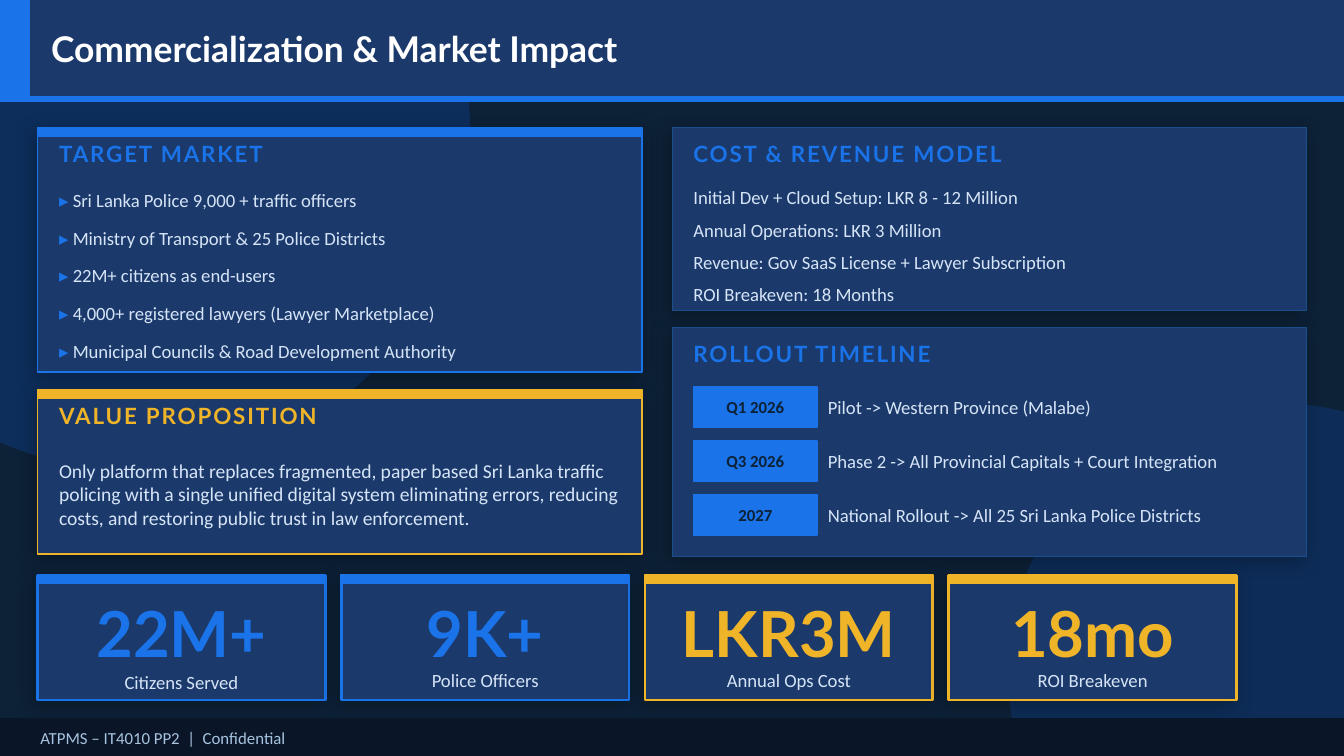
from dataclasses import dataclass

from lxml.etree import SubElement
from pptx import Presentation
from pptx.dml.color import RGBColor
from pptx.enum.shapes import MSO_SHAPE
from pptx.enum.text import MSO_ANCHOR, PP_ALIGN
from pptx.oxml.ns import qn
from pptx.util import Inches, Pt


@dataclass(frozen=True)
class Theme:
    background: str = "0D2137"
    glow: str = "0D47A1"
    panel: str = "1B3A6B"
    panel_edge: str = "1B4F8A"
    blue: str = "1A73E8"
    gold: str = "F0B429"
    white: str = "FFFFFF"
    text: str = "D6E4F7"
    footer: str = "0A1628"
    footer_text: str = "A8C4E0"
    shadow: str = "000000"
    heading_font: str = "Lato"
    body_font: str = "Calibri"
    title_size: float = 19
    heading_size: float = 12
    body_size: float = 10
    quote_size: float = 10.5
    small_size: float = 9
    stat_size: float = 34


@dataclass(frozen=True)
class Box:
    x: float
    y: float
    w: float
    h: float

    def lengths(self):
        return [Inches(v) for v in (self.x, self.y, self.w, self.h)]


@dataclass(frozen=True)
class Panel:
    box: Box
    heading: str
    color: str
    edge: str
    line_width: float
    has_bar: bool


@dataclass(frozen=True)
class Milestone:
    date: str
    text: str


@dataclass(frozen=True)
class Stat:
    value: str
    label: str
    color: str
    label_y: float = 4.98


T = Theme()
PAD = 0.16
BAR_H = 0.06


def add_shadow(sp) -> None:
    effects = sp._element.spPr.find(qn("a:effectLst"))
    shadow = SubElement(effects, qn("a:outerShdw"), blurRad=str(Pt(10)), dist=str(Pt(3)),
                        dir=str(135 * 60000), algn="bl", rotWithShape="0")
    clr = SubElement(shadow, qn("a:srgbClr"), val=T.shadow)
    SubElement(clr, qn("a:alpha"), val="25000")


def add_filled(s, kind, box: Box, fill: str):
    sp = s.shapes.add_shape(kind, *box.lengths())
    sp.shadow.inherit = False
    sp.fill.solid()
    sp.fill.fore_color.rgb = RGBColor.from_string(fill)
    return sp


def add_rect(s, box: Box, fill: str, edge: str, width: float = 1, shadow: bool = False) -> None:
    sp = add_filled(s, MSO_SHAPE.RECTANGLE, box, fill)
    sp.line.color.rgb = RGBColor.from_string(edge)
    sp.line.width = Pt(width)
    if shadow:
        add_shadow(sp)


def add_glow(s, box: Box, opacity: int) -> None:
    sp = add_filled(s, MSO_SHAPE.OVAL, box, T.glow)
    clr = sp._element.spPr.find(".//" + qn("a:srgbClr"))
    SubElement(clr, qn("a:alpha"), val=str(opacity * 1000))
    sp.line.fill.background()


def add_text(s, box: Box, text: str, size: float, color: str, font: str = T.body_font,
             bold: bool = False, align=PP_ALIGN.LEFT, anchor=MSO_ANCHOR.MIDDLE,
             spacing: float = 0, marker: str = "") -> None:
    tf = s.shapes.add_textbox(*box.lengths()).text_frame
    tf.word_wrap = True
    tf.margin_left = tf.margin_top = tf.margin_right = tf.margin_bottom = 0
    tf.vertical_anchor = anchor
    p = tf.paragraphs[0]
    p.alignment = align
    parts = [(marker, T.blue), (text, color)] if marker else [(text, color)]
    for words, shade in parts:
        r = p.add_run()
        r.text = words
        r.font.size = Pt(size)
        r.font.name = font
        r.font.bold = bold
        r.font.color.rgb = RGBColor.from_string(shade)
        if spacing:
            r.font._element.set("spc", str(int(spacing * 100)))


def add_panel(s, panel: Panel) -> None:
    b = panel.box
    add_rect(s, b, T.panel, panel.edge, panel.line_width, shadow=True)
    if panel.has_bar:
        add_rect(s, Box(b.x, b.y, b.w, BAR_H), panel.color, panel.color)
    add_text(s, Box(b.x + PAD, b.y + 0.02, b.w - 2 * PAD, 0.34), panel.heading,
             T.heading_size, panel.color, T.heading_font, bold=True, spacing=1)


def add_lines(s, panel: Panel, lines: list[str], step: float, marker: str = "") -> None:
    b = panel.box
    for i, line in enumerate(lines):
        add_text(s, Box(b.x + PAD, b.y + 0.4 + i * step, b.w - 2 * PAD, step), line,
                 T.body_size, T.text, marker=marker)


def add_milestone(s, x: float, y: float, item: Milestone) -> None:
    badge = Box(x, y, 0.92, 0.3)
    add_rect(s, badge, T.blue, T.blue)
    add_text(s, badge, item.date, T.small_size, T.background, bold=True, align=PP_ALIGN.CENTER)
    add_text(s, Box(x + 1, y, 3.44, 0.3), item.text, T.body_size, T.text)


def add_stat(s, x: float, stat: Stat) -> None:
    y, w = 4.28, 2.14
    add_rect(s, Box(x, y, w, 0.93), T.panel, stat.color, 1.5, shadow=True)
    add_rect(s, Box(x, y, w, BAR_H), stat.color, stat.color)
    add_text(s, Box(x, y + BAR_H, w, 0.72), stat.value, T.stat_size, stat.color,
             T.heading_font, bold=True, align=PP_ALIGN.CENTER)
    add_text(s, Box(x, stat.label_y, w, 0.46), stat.label, T.body_size, T.text,
             align=PP_ALIGN.CENTER, anchor=MSO_ANCHOR.TOP)


def main() -> None:
    prs = Presentation()
    prs.slide_width, prs.slide_height = Inches(10), Inches(10 * 9 / 16)
    s = prs.slides.add_slide(prs.slide_layouts[6])

    # Background
    s.background.fill.solid()
    s.background.fill.fore_color.rgb = RGBColor.from_string(T.background)
    add_glow(s, Box(-1.5, -1.5, 5, 5), 35)
    add_glow(s, Box(7.5, 3, 4, 4), 30)

    # Title bar
    add_rect(s, Box(0, 0, 10, 0.72), T.panel, T.panel)
    add_rect(s, Box(0, 0, 0.22, 0.72), T.blue, T.blue)
    add_text(s, Box(0.38, 0, 9.3, 0.72), "Commercialization & Market Impact",
             T.title_size, T.white, T.heading_font, bold=True)
    add_rect(s, Box(0, 0.72, 10, 0.03), T.blue, T.blue)

    # Target market
    market = Panel(Box(0.28, 0.95, 4.5, 1.82), "TARGET MARKET", T.blue, T.blue, 1, True)
    add_panel(s, market)
    add_lines(s, market, [
        "Sri Lanka Police 9,000 + traffic officers",
        "Ministry of Transport & 25 Police Districts",
        "22M+ citizens as end-users",
        "4,000+ registered lawyers (Lawyer Marketplace)",
        "Municipal Councils & Road Development Authority",
    ], 0.28, marker="▸ ")

    # Value proposition
    add_panel(s, Panel(Box(0.28, 2.9, 4.5, 1.22), "VALUE PROPOSITION", T.gold, T.gold, 1, True))
    add_text(s, Box(0.44, 3.3, 4.2, 0.75),
             "Only platform that replaces fragmented, paper based Sri Lanka traffic policing "
             "with a single unified digital system eliminating errors, reducing costs, and "
             "restoring public trust in law enforcement.", T.quote_size, T.text)

    # Cost and revenue
    cost = Panel(Box(5, 0.95, 4.72, 1.36), "COST & REVENUE MODEL", T.blue, T.panel_edge, 0.5, False)
    add_panel(s, cost)
    add_lines(s, cost, [
        "Initial Dev + Cloud Setup: LKR 8 - 12 Million",
        "Annual Operations: LKR 3 Million",
        "Revenue: Gov SaaS License + Lawyer Subscription",
        "ROI Breakeven: 18 Months",
    ], 0.24)

    # Rollout timeline
    add_panel(s, Panel(Box(5, 2.44, 4.72, 1.7), "ROLLOUT TIMELINE", T.blue, T.panel_edge, 0.5, False))
    milestones = [
        Milestone("Q1 2026", "Pilot -> Western Province (Malabe)"),
        Milestone("Q3 2026", "Phase 2 -> All Provincial Capitals + Court Integration"),
        Milestone("2027", "National Rollout -> All 25 Sri Lanka Police Districts"),
    ]
    for i, item in enumerate(milestones):
        add_milestone(s, 5.16, 2.88 + 0.4 * i, item)

    # Key figures
    stats = [
        Stat("22M+", "Citizens Served", T.blue, label_y=4.99),
        Stat("9K+", "Police Officers", T.blue),
        Stat("LKR3M", "Annual Ops Cost", T.gold),
        Stat("18mo", "ROI Breakeven", T.gold),
    ]
    for i, stat in enumerate(stats):
        add_stat(s, 0.28 + 2.26 * i, stat)

    # Footer
    add_rect(s, Box(0, 5.35, 10, 0.28), T.footer, T.footer)
    add_text(s, Box(0.3, 5.35, 9.4, 0.28), "ATPMS – IT4010 PP2  |  Confidential",
             T.small_size, T.footer_text)

    prs.save("out.pptx")


if __name__ == "__main__":
    main()
